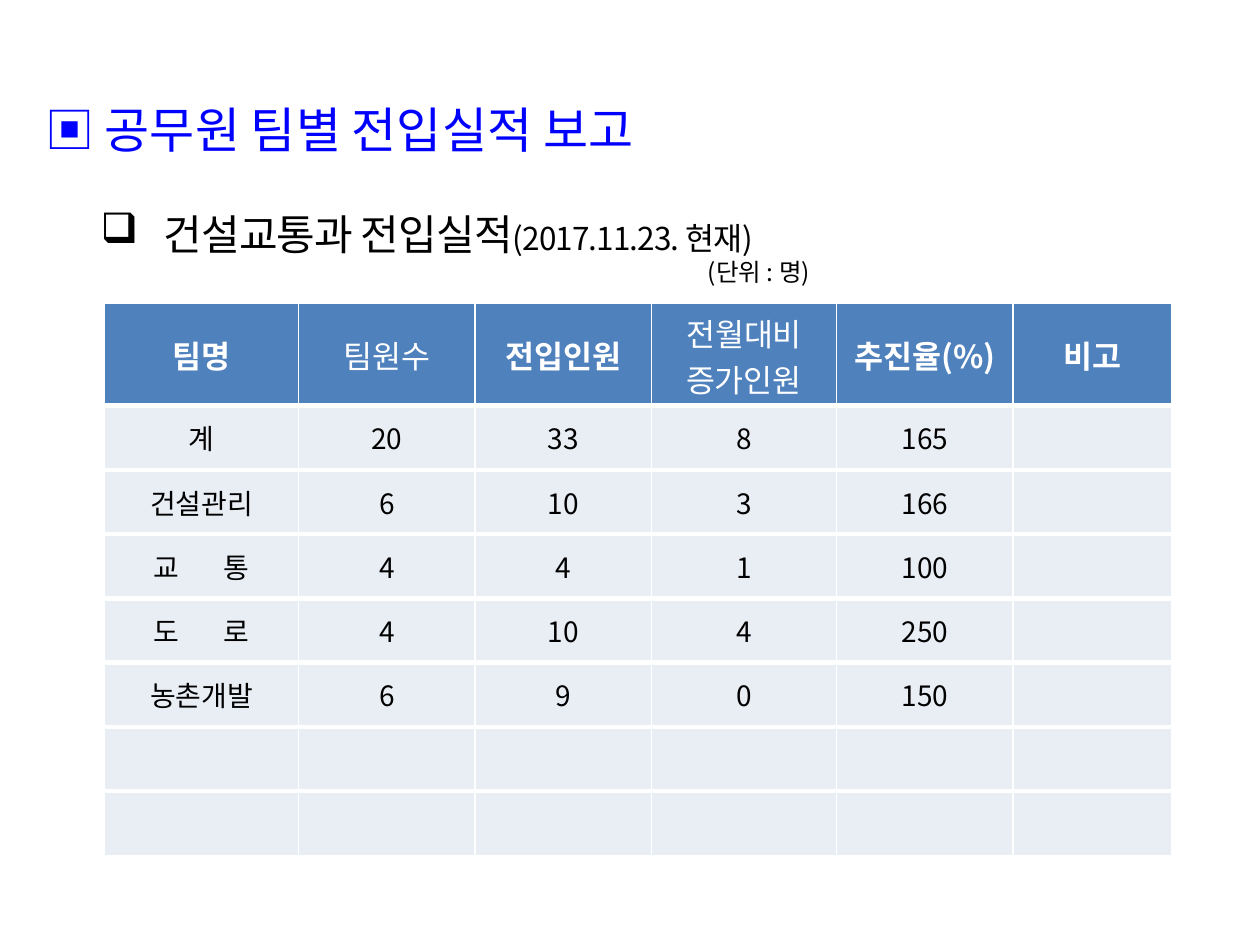
"""Build the slide reporting move-in results by team."""
from lxml import etree
from pptx import Presentation
from pptx.dml.color import RGBColor
from pptx.enum.text import MSO_ANCHOR, PP_ALIGN
from pptx.oxml.ns import qn
from pptx.util import Inches, Pt

MIDDLE = MSO_ANCHOR.MIDDLE
CENTER = PP_ALIGN.CENTER
FONT = "Noto Sans CJK KR"
COLORS = {"title": "0000FF", "text": "000000", "header": "4F81BD",
          "body": "E9EDF4", "white": "FFFFFF"}

HEADINGS = [
    {"runs": [("▣ 공무원 팀별 전입실적 보고", 28, 0)], "color": "title",
     "margin": 0.56, "indent": -0.5, "line": 44, "level": 0, "bullet": None},
    {"runs": [("건설교통과 전입실적", 24, -0.5), ("(2017.11.23. 현재)", 18, -0.5)],
     "color": "text", "margin": 1, "indent": -0.5, "line": 57, "level": 1, "bullet": "❑"},
    {"runs": [("(단위 : 명)", 14, 0)], "color": "text",
     "margin": 5.32, "indent": 0, "line": 16, "level": 1, "bullet": None},
]
HEADER = [("팀명", True), ("팀원수", False), ("전입인원", True),
          ("전월대비 증가인원", False), ("추진율(%)", True), ("비고", True)]
TEAMS = [
    ("계", "20", "33", "8", "165", ""),
    ("건설관리", "6", "10", "3", "166", ""),
    ("교 통", "4", "4", "1", "100", ""),
    ("도 로", "4", "10", "4", "250", ""),
    ("농촌개발", "6", "9", "0", "150", ""),
    ("",) * 6,
    ("",) * 6,
]
COLUMN_WIDTHS = [1.54, 1.4, 1.4, 1.47, 1.4, 1.26]
HEADER_HEIGHT, ROW_HEIGHT = 0.81, 0.51
NAME_SPACING = 11


def rgb(name):
    return RGBColor.from_string(COLORS[name])


def add_run(paragraph, text, size, color, bold=False, spacing=0):
    run = paragraph.add_run()
    run.text = text
    formats = {"name": FONT, "size": Pt(size), "bold": bold}
    for attribute, value in formats.items():
        setattr(run.font, attribute, value)
    run.font.color.rgb = rgb(color)
    properties = run.font._element
    etree.SubElement(properties, qn("a:ea"), typeface=FONT)
    if spacing:
        properties.set("spc", str(round(spacing * 100)))


def add_headings(slide):
    box = slide.shapes.add_textbox(Inches(0.2), Inches(0.6), Inches(9.57), Inches(6.38))
    frame = box.text_frame
    frame.word_wrap = True
    for index, heading in enumerate(HEADINGS):
        paragraph = frame.add_paragraph() if index else frame.paragraphs[0]
        formats = {"level": heading["level"], "line_spacing": Pt(heading["line"]),
                   "space_before": Pt(0)}
        for attribute, value in formats.items():
            setattr(paragraph, attribute, value)
        properties = paragraph._p.get_or_add_pPr()
        properties.set("marL", str(Inches(heading["margin"])))
        properties.set("indent", str(Inches(heading["indent"])))
        if heading["bullet"]:
            etree.SubElement(properties, qn("a:buChar"), char=heading["bullet"])
        for text, size, spacing in heading["runs"]:
            add_run(paragraph, text, size, heading["color"], spacing=spacing)


def set_borders(cell, top, bottom):
    properties = cell._tc.get_or_add_tcPr()
    widths = {"a:lnL": 1, "a:lnR": 1, "a:lnT": top, "a:lnB": bottom}
    for tag, width in widths.items():
        line = etree.SubElement(properties, qn(tag), w=str(Pt(width)))
        fill = etree.SubElement(line, qn("a:solidFill"))
        etree.SubElement(fill, qn("a:srgbClr"), val=COLORS["white"])


def fill_cell(cell, text, size, color, background, bold, borders):
    set_borders(cell, *borders)
    cell.fill.solid()
    cell.fill.fore_color.rgb = rgb(background)
    cell.vertical_anchor = MIDDLE
    paragraph = cell.text_frame.paragraphs[0]
    paragraph.alignment = CENTER
    first, gap, last = text.partition(" ")
    if gap and len(last) == 1:
        add_run(paragraph, first + gap, size, color, bold, NAME_SPACING)
        text = last
    if text:
        add_run(paragraph, text, size, color, bold)


def add_team_table(slide):
    heights = [HEADER_HEIGHT] + [ROW_HEIGHT] * len(TEAMS)
    table = slide.shapes.add_table(
        len(heights), len(HEADER), Inches(0.83), Inches(2.41),
        Inches(sum(COLUMN_WIDTHS)), Inches(sum(heights))).table
    for column, width in zip(table.columns, COLUMN_WIDTHS):
        column.width = Inches(width)
    for row, height in zip(table.rows, heights):
        row.height = Inches(height)
    for column, (text, bold) in enumerate(HEADER):
        fill_cell(table.cell(0, column), text, 18, "white", "header", bold, (1, 3))
    for row, team in enumerate(TEAMS, start=1):
        borders = (3, 1 if row == len(TEAMS) else 3)
        for column, text in enumerate(team):
            fill_cell(table.cell(row, column), text, 16, "text", "body", False, borders)


def main():
    presentation = Presentation()
    presentation.slide_width = Inches(10)
    presentation.slide_height = Inches(7.5)
    slide = presentation.slides.add_slide(presentation.slide_layouts[6])
    add_headings(slide)
    add_team_table(slide)
    presentation.save("out.pptx")


if __name__ == "__main__":
    main()
